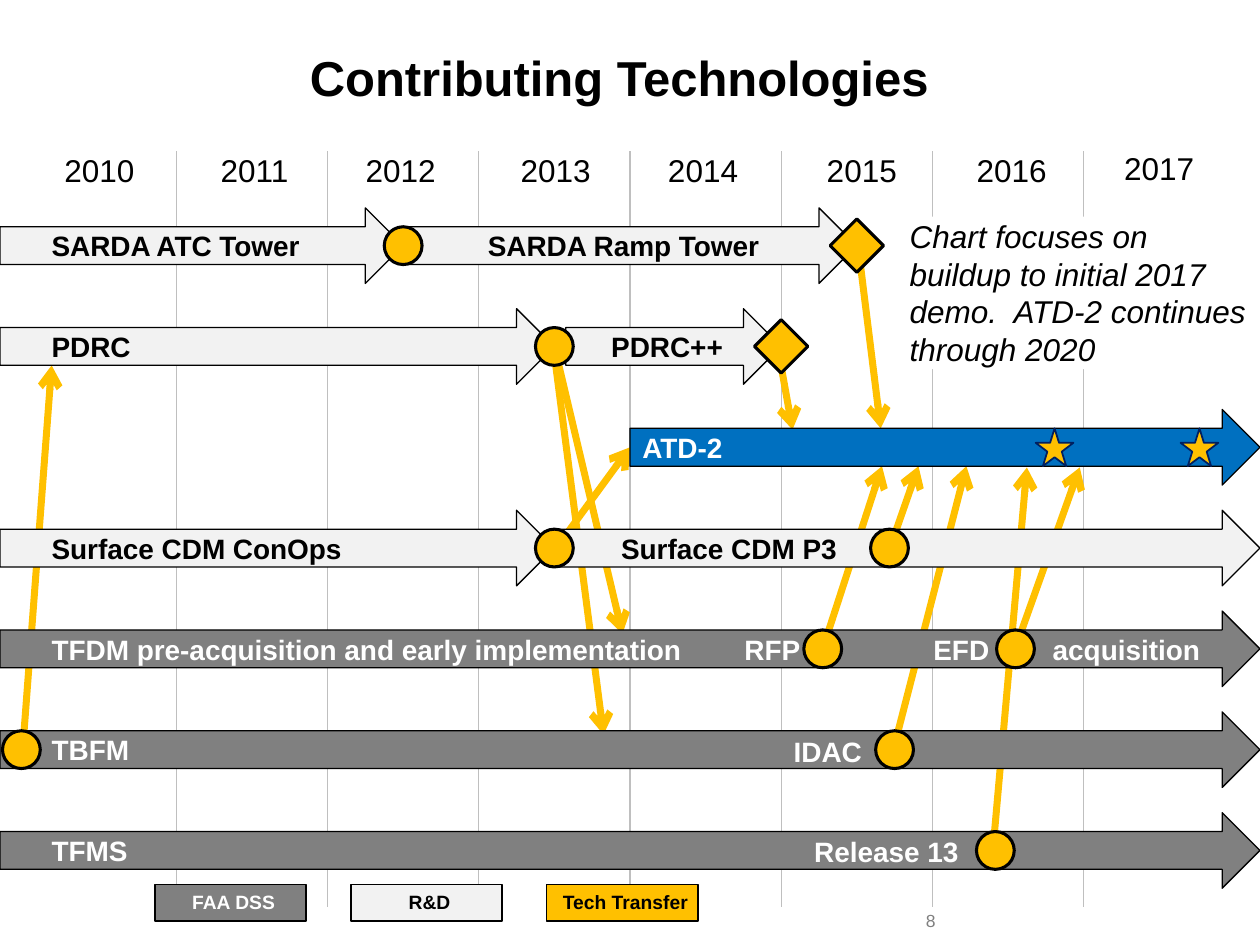
from lxml.etree import SubElement
from pptx import Presentation
from pptx.dml.color import RGBColor
from pptx.enum.shapes import MSO_CONNECTOR as Link, MSO_SHAPE as Shape
from pptx.enum.text import MSO_ANCHOR as Anchor, PP_ALIGN as Align
from pptx.oxml.ns import qn
from pptx.util import Inches, Pt

THEME = {
    "color": {"black": "000000", "white": "FFFFFF", "research": "F2F2F2",
              "system": "808080", "demo": "0070C0", "transfer": "FFC000",
              "grid": "BFBFBF", "star": "002060"},
    "size": {"title": 28, "note": 18, "bar": 16, "legend": 11, "page": 10},
    "font": "Arial",
}
COLOR = {name: RGBColor.from_string(code) for name, code in THEME["color"].items()}
SIZE = THEME["size"]

deck = Presentation()
deck.slide_width, deck.slide_height = Inches(10), Inches(7.5)
page = deck.slides.add_slide(deck.slide_layouts[6])

# The page is a grid of 100 columns by 75 rows of square cells
CELL = deck.slide_width / 100
BAR_HEIGHT, MARK = 6, 3
LANES = ["sarda", "pdrc", "atd", "cdm", "tfdm", "tbfm", "tfms"]
LANE_TOP = {name: 16.5 + 8 * index for index, name in enumerate(LANES)}


def add_box(at, text="", size="bar", color="black", shape=None, fill=None,
            line=("black", 0.75), inset=(0, 0, 0, 0), wrap=True,
            anchor=Anchor.TOP, align=Align.LEFT, bold=True, italic=False):
    """Place a shape, or a plain text box when no shape is given."""
    area = [round(value * CELL) for value in at]
    if shape is None:
        box = page.shapes.add_textbox(*area)
    else:
        box = page.shapes.add_shape(shape, *area)
        box.shadow.inherit = False
        box.fill.solid()
        box.fill.fore_color.rgb = COLOR[fill]
        if line:
            box.line.color.rgb, box.line.width = COLOR[line[0]], Pt(line[1])
        else:
            box.line.fill.background()
    if text:
        frame = box.text_frame
        frame.word_wrap, frame.vertical_anchor = wrap, anchor
        for side, value in zip(("left", "top", "right", "bottom"), inset):
            setattr(frame, f"margin_{side}", round(value * CELL))
        para = frame.paragraphs[0]
        para.alignment = align
        span = para.add_run()
        span.text = text
        span.font.color.rgb = COLOR[color]
        formats = {"name": THEME["font"], "size": Pt(SIZE[size]),
                   "bold": bold, "italic": italic}
        for name, value in formats.items():
            setattr(span.font, name, value)
    return box


def add_line(ends, color, width, arrow=False):
    """Join two grid points, with an open arrowhead at the second if asked."""
    link = page.shapes.add_connector(
        Link.STRAIGHT, *[round(value * CELL) for value in ends])
    link.line.color.rgb, link.line.width = COLOR[color], Pt(width)
    if arrow:
        SubElement(link.line._get_or_add_ln(), qn("a:tailEnd"), type="arrow")
    SubElement(link._element.spPr, qn("a:effectLst"))


# Title and page number
add_box((3.3, 3, 91.7, 6.2), "Contributing Technologies", "title",
        inset=(1, 0.5, 1, 0.5), anchor=Anchor.MIDDLE, align=Align.CENTER)
add_box((72.5, 71.7, 23.3, 2.5), "8", "page", "system",
        inset=(1, 0.5, 1, 0.5), bold=False)

# Year headings and the lines between years
year_centers = [7.9, 20.2, 31.8, 44.1, 55.8, 68.4, 80.3, 92]
for index, center in enumerate(year_centers):
    top = 11.3 if index == 7 else 11.5
    add_box((center - 3.8, top, 7.6, 4), str(2010 + index), "note",
            inset=(1, 0.5, 1, 0.5), wrap=False, align=Align.CENTER, bold=False)
for index in range(7):
    x = 14 + 12 * index
    add_line((x, 12, x, 72), "grid", 0.75)

# Scope note
add_box((72.2, 17.2, 27, 12.1),
        "Chart focuses on buildup to initial 2017 demo.  ATD-2 continues through 2020",
        "note", shape=Shape.RECTANGLE, fill="white", line=None,
        bold=False, italic=True)

# Technology transfers, drawn behind the bars
transfers = [
    (80.6, 51.4, 85.7, 37.1), (1.8, 59.5, 4.1, 29), (70.7, 43.3, 72.9, 37),
    (44, 43.7, 50, 35.5), (44, 27.5, 49.4, 50.3), (43.9, 27.4, 47.9, 58.3),
    (68.1, 19.5, 69.9, 34), (61.7, 27.4, 62.9, 34.1), (65.2, 51.8, 70, 37),
    (70.9, 59.5, 76.7, 37), (78.8, 67.5, 81.5, 37.1),
]
for ends in transfers:
    add_line(ends, "transfer", 4, arrow=True)

# Bars: lane, start, end, fill, text colour, left inset (None centres), text
bars = [
    ("sarda", 0, 32, "research", "black", 4.1, "SARDA ATC Tower"),
    ("sarda", 32, 68, "research", "black", None, "SARDA Ramp Tower"),
    ("pdrc", 0, 44, "research", "black", 4.1, "PDRC"),
    ("pdrc", 44.9, 62, "research", "black", None, "PDRC++"),
    ("atd", 50, 100, "demo", "white", 1, "ATD-2"),
    ("cdm", 0, 44, "research", "black", 4.1, "Surface CDM ConOps"),
    ("cdm", 44, 100, "research", "black", 5.3, "Surface CDM P3"),
    ("tfdm", 0, 100, "system", "white", 4.1,
     "TFDM pre-acquisition and early implementation"),
    ("tbfm", 0, 100, "system", "white", 4.1, "TBFM"),
    ("tfms", 0, 100, "system", "white", 4.1, "TFMS"),
]
for lane, start, end, fill, color, indent, text in bars:
    add_box((start, LANE_TOP[lane], end - start, BAR_HEIGHT), text, color=color,
            shape=Shape.RIGHT_ARROW, fill=fill, anchor=Anchor.MIDDLE,
            inset=(indent or 1, 0.5, 0.5, 0.5),
            align=Align.LEFT if indent else Align.CENTER)

# Milestones: lane, centre, shape, turn
milestones = [
    ("sarda", 32, Shape.OVAL, 0), ("sarda", 68, Shape.RECTANGLE, 45),
    ("pdrc", 44, Shape.OVAL, 0), ("pdrc", 62, Shape.RECTANGLE, 45),
    ("atd", 83.7, Shape.STAR_5_POINT, 0), ("atd", 95.2, Shape.STAR_5_POINT, 0),
    ("cdm", 44, Shape.OVAL, 0), ("cdm", 70.6, Shape.OVAL, 0),
    ("tfdm", 65.3, Shape.OVAL, 0), ("tfdm", 80.6, Shape.OVAL, 0),
    ("tbfm", 1.7, Shape.OVAL, 0), ("tbfm", 71, Shape.OVAL, 0),
    ("tfms", 79, Shape.OVAL, 0),
]
for lane, center, shape, turn in milestones:
    top = LANE_TOP[lane] + (BAR_HEIGHT - MARK) / 2
    outline = ("star", 1) if shape == Shape.STAR_5_POINT else ("black", 1.75)
    mark = add_box((center - MARK / 2, top, MARK, MARK), shape=shape,
                   fill="transfer", line=outline)
    mark.rotation = turn

# Milestone labels: lane, left, width, drop below the lane top, text
labels = [
    ("tfdm", 58.7, 5.2, 1.7, "RFP"), ("tfdm", 73.6, 5.4, 1.7, "EFD"),
    ("tfdm", 82.9, 13, 1.7, "acquisition"), ("tbfm", 61.7, 8, 1.8, "IDAC"),
    ("tfms", 64, 12.7, 1.7, "Release 13"),
]
for lane, left, width, drop, text in labels:
    add_box((left, LANE_TOP[lane] + drop, width, 2.7), text, color="white",
            align=Align.CENTER)

# Legend
legend = [("FAA DSS", "system", "white"), ("R&D", "research", "black"),
          ("Tech Transfer", "transfer", "black")]
for index, (text, fill, color) in enumerate(legend):
    add_box((12.3 + 15.55 * index, 70.2, 12, 2.9), text, "legend", color,
            shape=Shape.RECTANGLE, fill=fill, inset=(1, 0.5, 0.5, 0.5),
            align=Align.CENTER)

deck.save("out.pptx")
